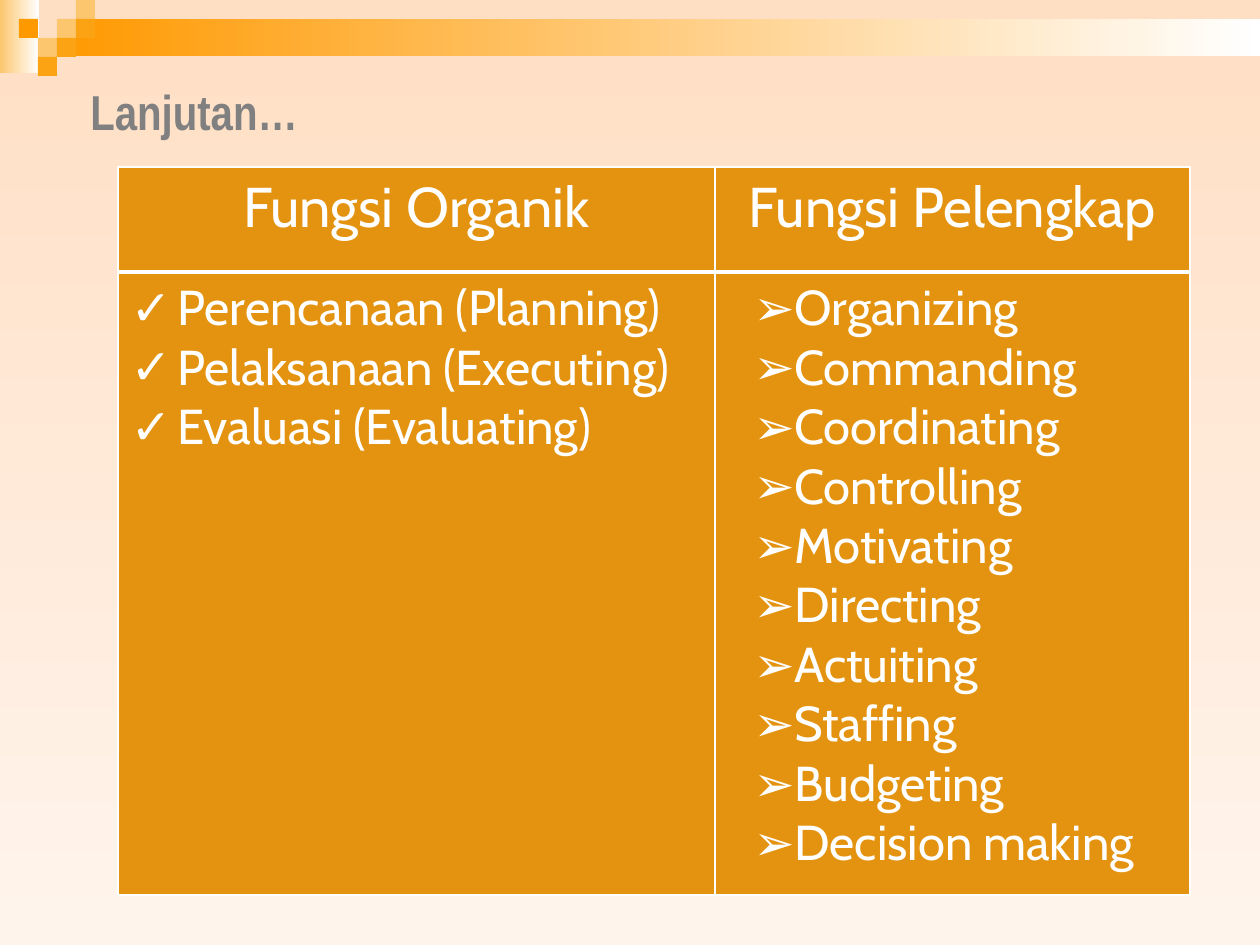
from pptx import Presentation
from pptx import util as u
from pptx.dml.color import RGBColor
from pptx.enum import shapes, text
from pptx.oxml import parse_xml
from pptx.oxml.ns import nsdecls

TITLE = "Lanjutan…"
COLUMNS = [
    {"head": "Fungsi Organik", "width": 597, "bullet": "✓", "indent": 47, "hang": 47,
     "items": ["Perencanaan (Planning)", "Pelaksanaan (Executing)", "Evaluasi (Evaluating)"]},
    {"head": "Fungsi Pelengkap", "width": 475, "bullet": "➢", "indent": 65, "hang": 39,
     "items": ["Organizing", "Commanding", "Coordinating", "Controlling", "Motivating",
               "Directing", "Actuiting", "Staffing", "Budgeting", "Decision making"]},
]
THEME = {
    "pale": "FCC66E", "amber": "FBA313", "orange": "FF9900", "white": "FFFFFF",
    "cell": "E39310", "title": "808080", "sky": "FFDFC4", "ground": "FFF4EC",
    "title_font": "Arial Narrow", "table_font": "Cabin", "head_size": 32, "body_size": 28,
}
TILE = 19
TILES = [(3, 1, "pale"), (4, 0, "pale"), (4, 1, "amber"), (2, 2, "pale"),
         (1, 1, "orange"), (3, 2, "amber"), (2, 3, "amber")]
BANDS = [((0, 0, 39, 73), "pale"), ((57, 19, 1203, 37), "orange")]
TITLE_BOX = (78, 68, 966, 85)
TABLE_LEFT, TABLE_TOP = 118, 167
ROW_HEIGHTS = [105, 623]
HEAD_BORDERS = {"L": 1, "R": 1, "T": 1, "B": 3}
BODY_BORDERS = {"L": 1, "R": 1, "T": 3, "B": 1}


def px(length):
    return u.Emu(round(length * 914400 / 126))


def color(name):
    return RGBColor.from_string(THEME[name])


def set_all(target, values):
    for name, value in values.items():
        setattr(target, name, value)


def paint_gradient(fill, start, end, angle):
    fill.gradient()
    fill.gradient_angle = angle
    for stop, name in zip(fill.gradient_stops, (start, end)):
        stop.color.rgb = color(name)


def paint_solid(fill, name):
    fill.solid()
    fill.fore_color.rgb = color(name)


def add_rectangle(page, place):
    box = page.shapes.add_shape(shapes.MSO_SHAPE.RECTANGLE, *map(px, place))
    box.shadow.inherit = False
    box.line.fill.background()
    return box


def write(para, words, ink, **font):
    span = para.add_run()
    span.text = words
    set_all(span.font, font)
    span.font.color.rgb = color(ink)


def add_bullet(para, column):
    props = para._p.get_or_add_pPr()
    props.set("marL", str(px(column["indent"])))
    props.set("indent", str(-px(column["hang"])))
    props.append(parse_xml(f'<a:buFont {nsdecls("a")} typeface="{THEME["table_font"]}"/>'))
    props.append(parse_xml(f'<a:buChar {nsdecls("a")} char="{column["bullet"]}"/>'))


def dress_cell(cell, borders):
    props = cell._tc.get_or_add_tcPr()
    for side, points in borders.items():
        props.append(parse_xml(
            f'<a:ln{side} {nsdecls("a")} w="{u.Pt(points)}"><a:solidFill>'
            f'<a:srgbClr val="{THEME["white"]}"/></a:solidFill></a:ln{side}>'))
    paint_solid(cell.fill, "cell")


def add_decoration(page):
    paint_gradient(page.background.fill, "sky", "ground", 270)
    for place, start in BANDS:
        paint_gradient(add_rectangle(page, place).fill, start, "white", 0)
    for column, row, name in TILES:
        place = (column * TILE, row * TILE, TILE, TILE)
        paint_solid(add_rectangle(page, place).fill, name)


def add_title(page):
    frame = page.shapes.add_textbox(*map(px, TITLE_BOX)).text_frame
    set_all(frame, {"word_wrap": True, "vertical_anchor": text.MSO_ANCHOR.MIDDLE})
    write(frame.paragraphs[0], TITLE, "title", name=THEME["title_font"],
          size=u.Pt(THEME["body_size"]), bold=True)


def add_functions_table(page):
    width = sum(column["width"] for column in COLUMNS)
    place = (TABLE_LEFT, TABLE_TOP, width, sum(ROW_HEIGHTS))
    table = page.shapes.add_table(len(ROW_HEIGHTS), len(COLUMNS), *map(px, place)).table
    set_all(table, {"first_row": False, "horz_banding": False})
    for row, height in zip(table.rows, ROW_HEIGHTS):
        row.height = px(height)
    for index, column in enumerate(COLUMNS):
        table.columns[index].width = px(column["width"])
        head, body = table.cell(0, index), table.cell(1, index)
        dress_cell(head, HEAD_BORDERS)
        dress_cell(body, BODY_BORDERS)
        para = head.text_frame.paragraphs[0]
        para.alignment = text.PP_ALIGN.CENTER
        write(para, column["head"], "white", name=THEME["table_font"],
              size=u.Pt(THEME["head_size"]), bold=False)
        frame = body.text_frame
        for number, item in enumerate(column["items"]):
            para = frame.add_paragraph() if number else frame.paragraphs[0]
            add_bullet(para, column)
            write(para, item, "white", name=THEME["table_font"],
                  size=u.Pt(THEME["body_size"]), bold=False)


def main():
    deck = Presentation()
    set_all(deck, {"slide_width": px(1260), "slide_height": px(945)})
    page = deck.slides.add_slide(deck.slide_layouts[6])
    add_decoration(page)
    add_title(page)
    add_functions_table(page)
    deck.save("out.pptx")


if __name__ == "__main__":
    main()
